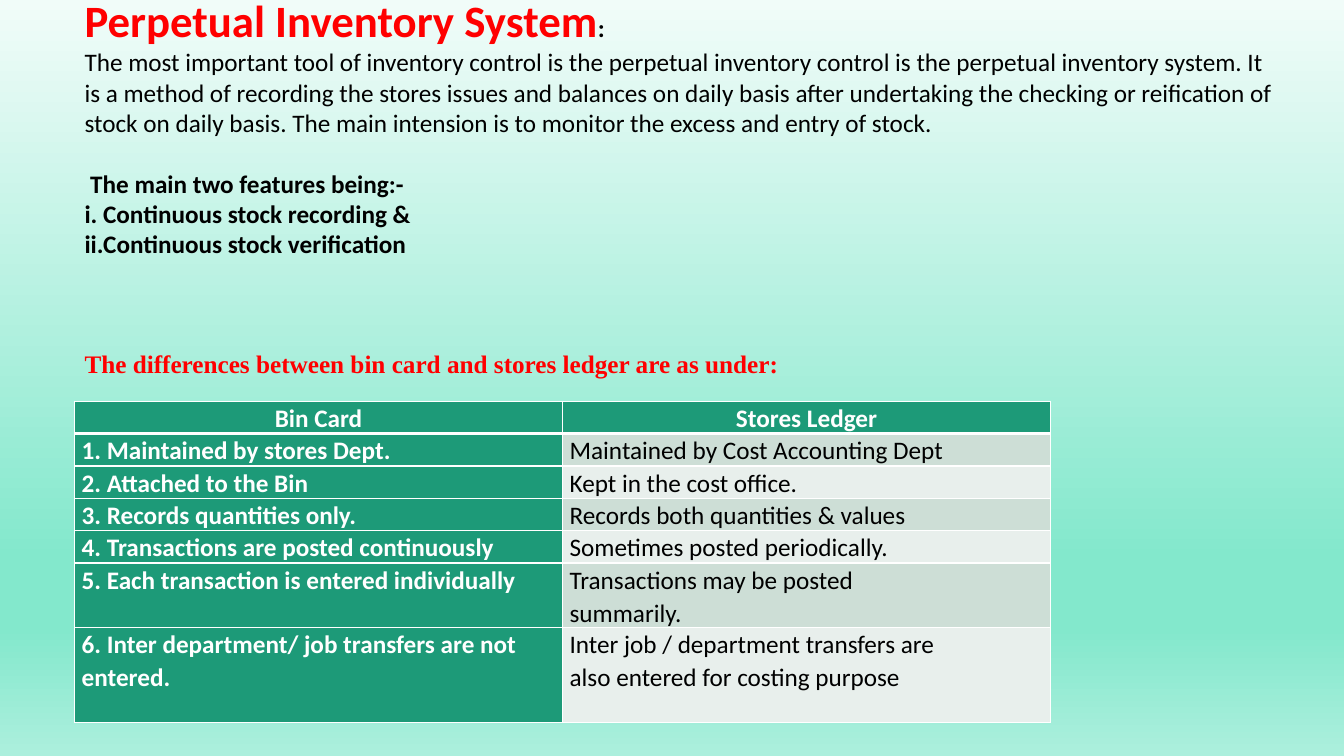
from lxml.etree import SubElement
from pptx import Presentation
from pptx.dml.color import RGBColor
from pptx.enum.text import MSO_ANCHOR, PP_ALIGN
from pptx.oxml.ns import qn
from pptx.util import Inches, Pt

RED, BLACK, WHITE = "FF0000", "000000", "FFFFFF"
GREEN, BANDS = "1D9A78", ("CDDED6", "E8EFEC")
BACKDROP = [(0, "F1FCF9"), (74, "83E8CC"), (83, "83E8CC"), (100, "ACEFDD")]
BODY_FONT, HEADING_FONT = "Calibri", "Times New Roman"

INTRO = (
    "The most important tool of inventory control is the perpetual inventory "
    "control is the perpetual inventory system. It is a method of recording the "
    "stores issues and balances on daily basis after undertaking the checking or "
    "reification of stock on daily basis. The main intension is to monitor the "
    "excess and entry of stock."
)
FEATURES = [
    " The main two features being:-",
    "i. Continuous stock recording &",
    "ii.Continuous stock verification",
]
# "\v" is a line break inside a paragraph
DIFFERENCES = [
    ("Bin Card", "Stores Ledger"),
    ("1. Maintained by stores Dept.", "Maintained by Cost Accounting Dept"),
    ("2. Attached to the Bin", "Kept in the cost office."),
    ("3. Records quantities only.", "Records both quantities & values"),
    ("4. Transactions are posted continuously", "Sometimes posted periodically."),
    ("5. Each transaction is entered individually",
     "Transactions may be posted\vsummarily."),
    ("6. Inter department/ job transfers are not entered.",
     "Inter job / department transfers are\valso entered for costing purpose"),
]
ROW_HEIGHTS = [0.32] * 5 + [0.64, 0.94]


def rgb(color):
    return RGBColor.from_string(color)


def style(run, color=BLACK, bold=False, size=18, font=BODY_FONT):
    run.font.name, run.font.size, run.font.bold = font, Pt(size), bold
    run.font.color.rgb = rgb(color)


class InventorySlide:
    def __init__(self, presentation):
        self.slide = presentation.slides.add_slide(presentation.slide_layouts[6])

    def backdrop(self, stops):
        """Fill the background with a gradient running from top to bottom."""
        self.slide.background.fill.gradient()
        gradient = self.slide.element.find(".//" + qn("a:gradFill"))
        stop_list = gradient.find(qn("a:gsLst"))
        for default_stop in list(stop_list):
            stop_list.remove(default_stop)
        for percent, color in stops:
            stop = SubElement(stop_list, qn("a:gs"), pos=str(percent * 1000))
            SubElement(stop, qn("a:srgbClr"), val=color)
        gradient.find(qn("a:lin")).set("ang", "5400000")

    def text(self, left, top, width, height, paragraphs, anchor=MSO_ANCHOR.TOP):
        """Each paragraph is (space before in points, [(text, run style), ...])."""
        frame = self.slide.shapes.add_textbox(
            Inches(left), Inches(top), Inches(width), Inches(height)).text_frame
        frame.word_wrap = True
        frame.vertical_anchor = anchor
        for index, (gap, runs) in enumerate(paragraphs):
            paragraph = frame.add_paragraph() if index else frame.paragraphs[0]
            paragraph.space_before = Pt(gap)
            for words, look in runs:
                run = paragraph.add_run()
                run.text = words
                style(run, **look)

    def table(self, left, top, column_width, row_heights, rows):
        table = self.slide.shapes.add_table(
            len(rows), 2, Inches(left), Inches(top),
            Inches(2 * column_width), Inches(sum(row_heights))).table
        for column in table.columns:
            column.width = Inches(column_width)
        for r, (height, row) in enumerate(zip(row_heights, rows)):
            table.rows[r].height = Inches(height)
            for c, words in enumerate(row):
                self.cell(table.cell(r, c), words, r, c)

    def cell(self, cell, words, r, c):
        strong = r == 0 or c == 0
        cell.margin_left = cell.margin_right = Inches(0.07)
        cell.margin_top = cell.margin_bottom = 0
        paragraph = cell.text_frame.paragraphs[0]
        paragraph.text = words
        paragraph.line_spacing = 1.07
        paragraph.alignment = PP_ALIGN.LEFT if r else PP_ALIGN.CENTER
        for run in paragraph.runs:
            style(run, WHITE if strong else BLACK, bold=strong)
        self.borders(cell, top=3 if r == 1 else 1, bottom=1 if r else 3)
        cell.fill.solid()
        cell.fill.fore_color.rgb = rgb(GREEN if strong else BANDS[(r - 1) % 2])

    def borders(self, cell, top, bottom):
        properties = cell._tc.get_or_add_tcPr()
        for side, points in (("L", 1), ("R", 1), ("T", top), ("B", bottom)):
            line = SubElement(properties, qn("a:ln" + side), w=str(Pt(points)))
            SubElement(SubElement(line, qn("a:solidFill")), qn("a:srgbClr"), val=WHITE)


def main():
    presentation = Presentation()
    presentation.slide_width, presentation.slide_height = Inches(13.33), Inches(7.5)
    page = InventorySlide(presentation)
    page.backdrop(BACKDROP)
    title = [("Perpetual Inventory System", dict(color=RED, bold=True, size=32)),
             (":", dict(bold=True))]
    features = [(0 if i else 22, [(feature, dict(bold=True))])
                for i, feature in enumerate(FEATURES)]
    page.text(0.74, -0.12, 12.08, 2.76,
              [(0, title), (0, [(INTRO, {})])] + features)
    page.table(0.74, 3.98, 4.84, ROW_HEIGHTS, DIFFERENCES)
    page.text(0.74, 3.41, 8.67, 0.4, [(0, [(
        "The differences between bin card and stores ledger are as under:",
        dict(color=RED, bold=True, font=HEADING_FONT))])], MSO_ANCHOR.MIDDLE)
    presentation.save("out.pptx")


if __name__ == "__main__":
    main()
